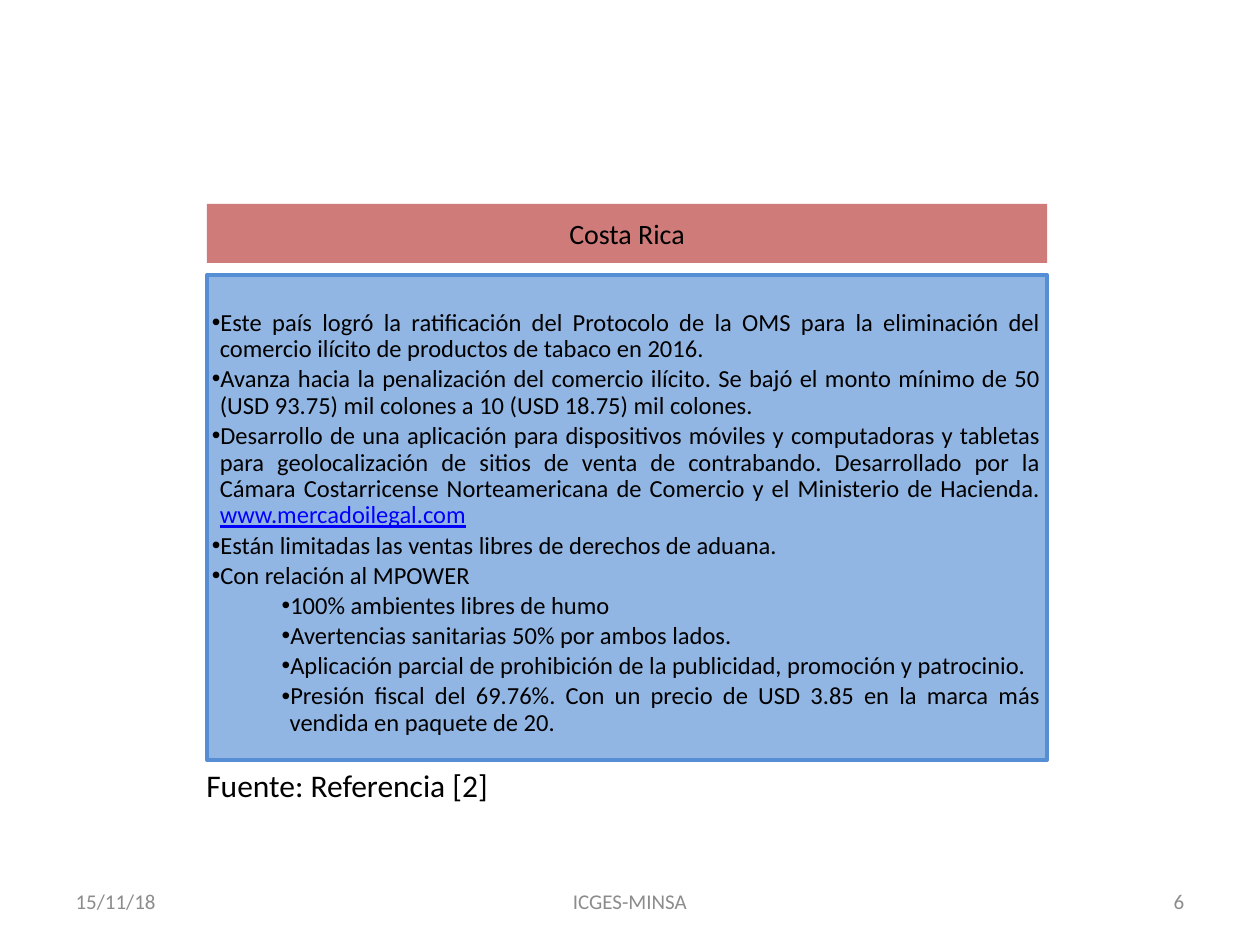
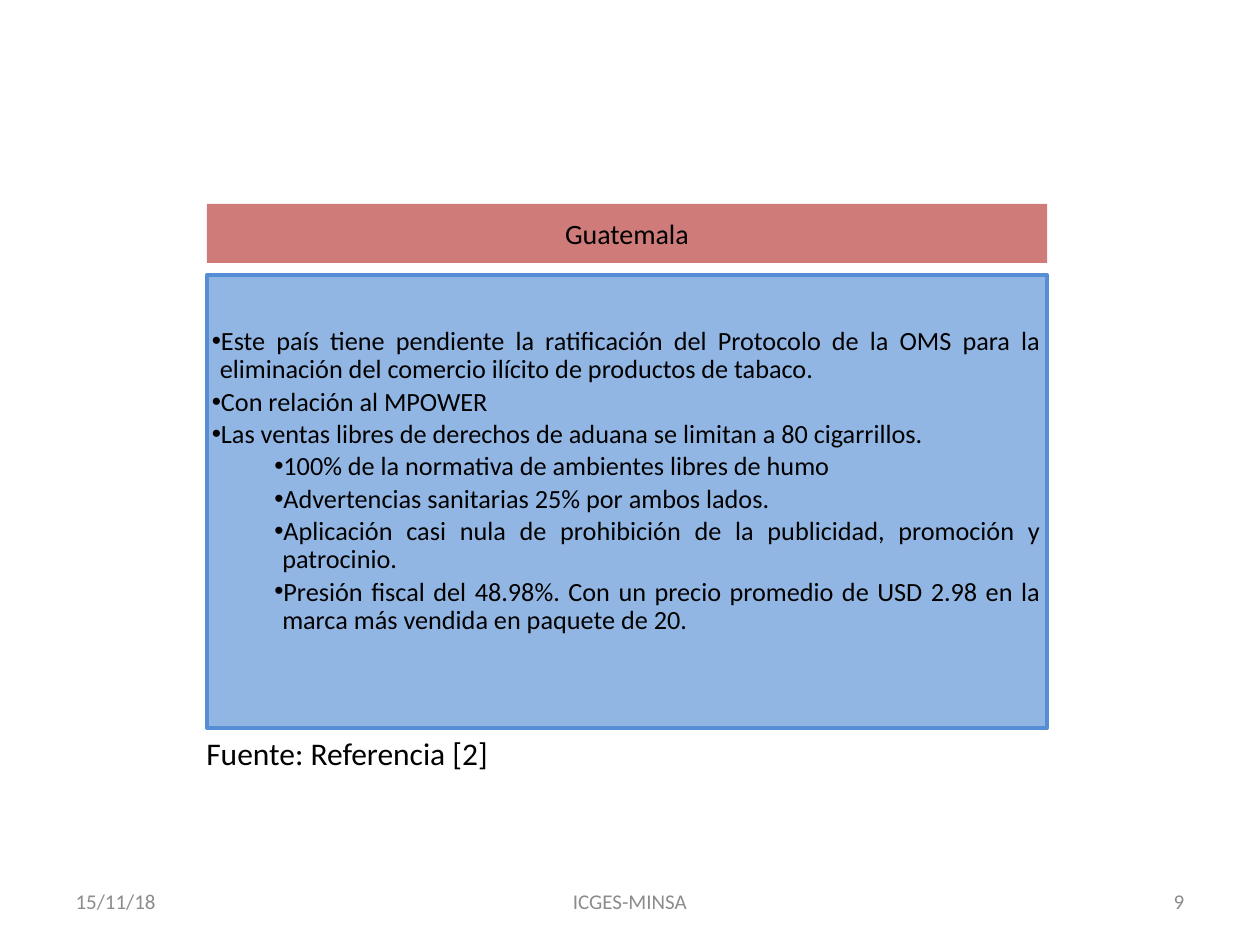
from copy import deepcopy

from lxml import etree
from pptx import Presentation
from pptx import util as u
from pptx.dml.color import RGBColor
from pptx.enum import text
from pptx.oxml import ns

# Content: each point is (is_sub_point, text, web address or None)
COUNTRIES = [
    dict(
        name="Costa Rica", page="6", size=14, box_height=9.78, top_inset=0.71, sub_indent=1.57, sub_level=3,
        points=[
            (False, "Este país logró la ratificación del Protocolo de la OMS para la eliminación del "
                    "comercio ilícito de productos de tabaco en 2016.", None),
            (False, "Avanza hacia la penalización del comercio ilícito. Se bajó el monto mínimo de 50 "
                    "(USD 93.75) mil colones a 10 (USD 18.75) mil colones.", None),
            (False, "Desarrollo de una aplicación para dispositivos móviles y computadoras y tabletas para "
                    "geolocalización de sitios de venta de contrabando. Desarrollado por la Cámara "
                    "Costarricense Norteamericana de Comercio y el Ministerio de Hacienda. ",
             "www.mercadoilegal.com"),
            (False, "Están limitadas las ventas libres de derechos de aduana.", None),
            (False, "Con relación al MPOWER", None),
            (True, "100% ambientes libres de humo", None),
            (True, "Avertencias sanitarias 50% por ambos lados.", None),
            (True, "Aplicación parcial de prohibición de la publicidad, promoción y patrocinio.", None),
            (True, "Presión fiscal del 69.76%. Con un precio de USD 3.85 en la marca más vendida en "
                   "paquete de 20.", None),
        ],
    ),
    dict(
        name="Guatemala", page="9", size=15, box_height=9.14, top_inset=1.07, sub_indent=1.42, sub_level=2,
        points=[
            (False, "Este país tiene pendiente la ratificación del Protocolo de la OMS para la "
                    "eliminación del comercio ilícito de productos de tabaco.", None),
            (False, "Con relación al MPOWER", None),
            (False, "Las ventas libres de derechos de aduana se limitan a 80 cigarrillos.", None),
            (True, "100% de la normativa de ambientes libres de humo", None),
            (True, "Advertencias sanitarias 25% por ambos lados.", None),
            (True, "Aplicación casi nula de prohibición de la publicidad, promoción y patrocinio.", None),
            (True, "Presión fiscal del 48.98%. Con un precio promedio de USD 2.98 en la marca más "
                   "vendida en paquete de 20.", None),
        ],
    ),
]
SOURCE_NOTE = "Fuente: Referencia [2]"
DATE, FOOTER = "15/11/18", "ICGES-MINSA"

# Shared style, lengths in centimetres
COLORS = {"band": "C0504D", "box": "558ED5", "text": "000000", "link": "0000FF", "footer": "8C8C8C"}
FONT = "Calibri"
LEFT, WIDTH = 4.17, 16.94
BAND_TOP, BAND_HEIGHT = 4.11, 1.19
BOX_TOP = 5.54
HANGING = 0.16


def color(name):
    return RGBColor.from_string(COLORS[name])


def style_font(font, size, color_name="text"):
    font.name, font.size = FONT, u.Pt(size)
    font.color.rgb = color(color_name)


def place_panel(shape, top, height, color_name, opacity, insets):
    """Position a placeholder and give it a translucent fill."""
    shape.left, shape.top, shape.width, shape.height = map(u.Cm, (LEFT, top, WIDTH, height))
    shape.fill.solid()
    shape.fill.fore_color.rgb = color(color_name)
    fill_color = shape.element.spPr.find(".//" + ns.qn("a:srgbClr"))
    etree.SubElement(fill_color, ns.qn("a:alpha"), val=str(opacity * 1000))
    frame = shape.text_frame
    frame.word_wrap = True
    frame.auto_size = text.MSO_AUTO_SIZE.NONE
    frame.margin_left, frame.margin_top, frame.margin_right, frame.margin_bottom = map(u.Cm, insets)
    return frame


def add_point(paragraph, point, country):
    is_sub, words, address = point
    paragraph.level = country["sub_level"] if is_sub else 1
    # Hanging bullet
    properties = paragraph._p.get_or_add_pPr()
    properties.set("marL", str(u.Cm(country["sub_indent"] if is_sub else HANGING)))
    properties.set("indent", str(-u.Cm(HANGING)))
    etree.SubElement(properties, ns.qn("a:buChar"), char="•")
    paragraph.alignment = text.PP_ALIGN.JUSTIFY
    paragraph.line_spacing = 0.9
    paragraph.space_before = u.Pt(0)
    paragraph.space_after = u.Pt(0.15 * country["size"])
    style_font(paragraph.font, country["size"])
    paragraph.add_run().text = words
    if address:
        run = paragraph.add_run()
        run.text = address
        run.font.color.rgb = color("link")
        run.font.underline = True


def add_footers(slide, page):
    """Bring the layout's date, footer and number placeholders onto the slide."""
    words = {10: DATE, 11: FOOTER, 12: page}
    for holder in slide.slide_layout.placeholders:
        if holder.placeholder_format.idx in words:
            slide.shapes.element.append(deepcopy(holder.element))
    for idx, label in words.items():
        frame = slide.placeholders[idx].text_frame
        frame.text = label
        style_font(frame.paragraphs[0].font, 12, "footer")


def build_slide(presentation, country):
    slide = presentation.slides.add_slide(presentation.slide_layouts[1])
    add_footers(slide, country["page"])

    # Country band
    frame = place_panel(slide.shapes.title, BAND_TOP, BAND_HEIGHT, "band", 75, (0.13, 0.08, 0.13, 0.08))
    frame.text = country["name"]
    frame.vertical_anchor = text.MSO_ANCHOR.MIDDLE
    frame.paragraphs[0].alignment = text.PP_ALIGN.CENTER
    style_font(frame.paragraphs[0].font, 16)

    # Box of findings
    box = slide.placeholders[1]
    frame = place_panel(box, BOX_TOP, country["box_height"], "box", 64, (0.1, country["top_inset"], 0.13, 0.15))
    box.line.color.rgb = color("box")
    box.line.width = u.Pt(2)
    frame.vertical_anchor = text.MSO_ANCHOR.TOP
    for number, point in enumerate(country["points"]):
        add_point(frame.add_paragraph() if number else frame.paragraphs[0], point, country)

    # Source note just under the box
    note = slide.shapes.add_textbox(u.Cm(3.91), box.top + box.height, u.Cm(7.39), u.Cm(1.02))
    note.text_frame.word_wrap = True
    note.text_frame.text = SOURCE_NOTE
    style_font(note.text_frame.paragraphs[0].font, 18)


def main():
    presentation = Presentation()
    presentation.slide_width, presentation.slide_height = u.Cm(25.4), u.Cm(19.05)
    for country in COUNTRIES:
        build_slide(presentation, country)
    presentation.save("out.pptx")


if __name__ == "__main__":
    main()
